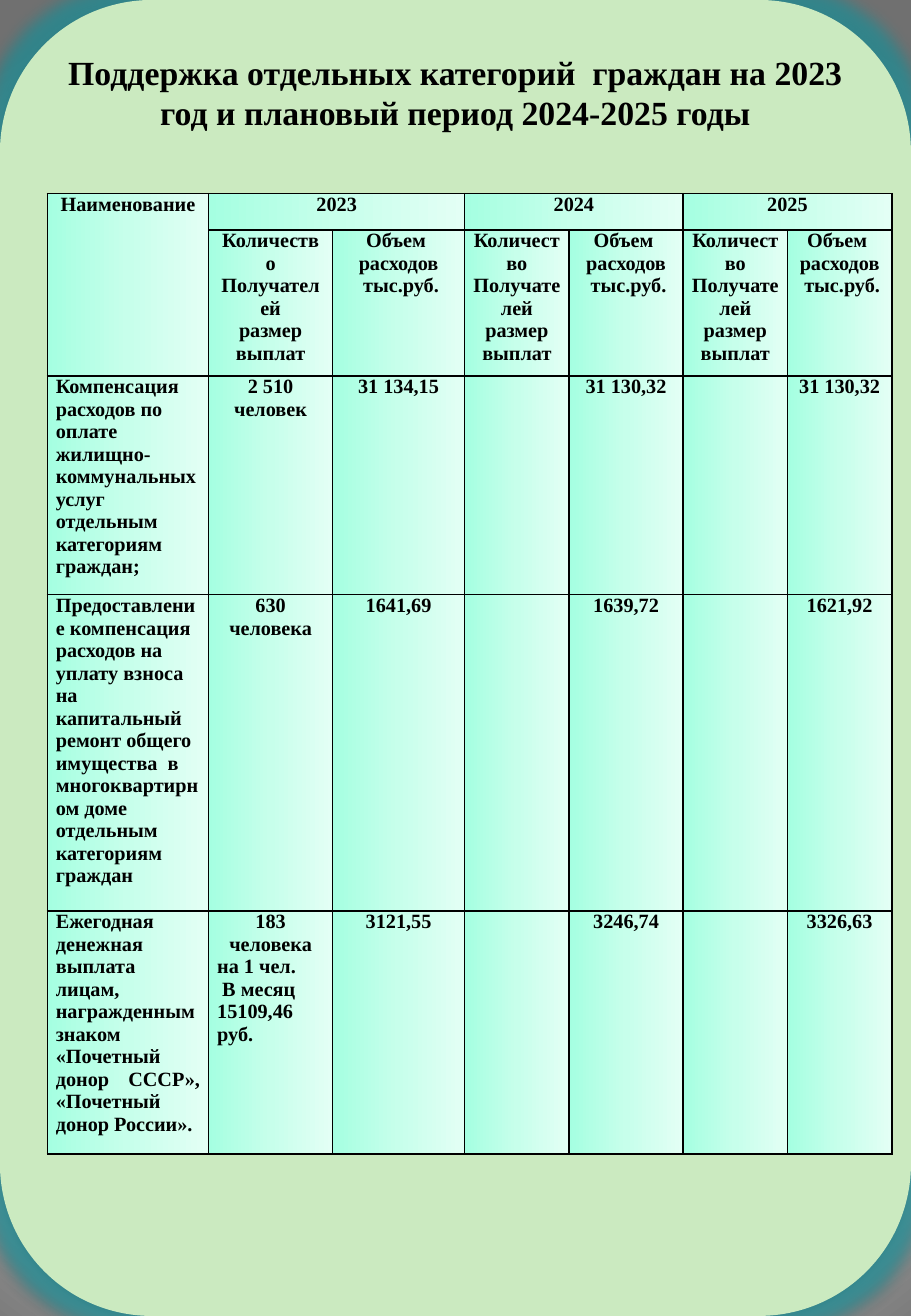
import pptx
import pptx.util
import pptx.dml.color
import pptx.enum.shapes
import pptx.enum.text
import pptx.oxml
import pptx.oxml.ns

ALIGN = pptx.enum.text.PP_ALIGN
WIDE, HIGH = pptx.util.Inches(7.5), pptx.util.Inches(10.83)
FACE = "Times New Roman"
MINT = [(0, "A5FFE1"), (50, "C7FFEB"), (100, "E3FFF5")]
SMOKE = [(0, "FFFFFF"), (25, "FFFFFF"), (100, "707070")]
TITLE = "Поддержка отдельных категорий  граждан на 2023 год и плановый период 2024-2025 годы"
COUNT = "Количество\nПолучателей\nразмер\nвыплат"
COST = "Объем \nрасходов\n тыс.руб."
COLS = [133, 102, 109, 86, 94, 86, 86]
ROWS = [30, 120, 180, 260, 200]
CELLS = [
    ["Наименование", "2023", "", "2024", "", "2025", ""],
    [""] + [COUNT, COST] * 3,
    ["Компенсация расходов по оплате жилищно-коммунальных услуг отдельным категориям граждан;",
     "2 510 человек", "31 134,15", "", "31 130,32", "", "31 130,32"],
    ["Предоставление компенсация расходов на уплату взноса на капитальный ремонт общего "
     "имущества  в многоквартирном доме отдельным категориям граждан",
     "630 человека", "1641,69", "", "1639,72", "", "1621,92"],
    ["Ежегодная денежная выплата лицам, награжденным знаком «Почетный донор СССР», "
     "«Почетный донор России».",
     "183 человека\nна 1 чел.\n В месяц 15109,46 руб.", "3121,55", "", "3246,74", "", "3326,63"],
]


def apply(item, form):
    for key, value in form.items():
        setattr(item, key, value)


def paint(fill, tone):
    fill.solid()
    fill.fore_color.rgb = pptx.dml.color.RGBColor.from_string(tone)


def build(tag, rest):
    return pptx.oxml.parse_xml(f"<a:{tag} {pptx.oxml.ns.nsdecls('a')} {rest}</a:{tag}>")


def hue(tone, alpha=100):
    return f'<a:srgbClr val="{tone}"><a:alpha val="{alpha * 1000}"/></a:srgbClr>'


def blend(stops, shade):
    marks = "".join(f'<a:gs pos="{spot * 1000}">{hue(tone)}</a:gs>' for spot, tone in stops)
    return build("gradFill", f'rotWithShape="1"><a:gsLst>{marks}</a:gsLst>{shade}')


def style(part, size, align):
    part.alignment = align
    for run in part.runs:
        apply(run.font, {"name": FACE, "size": pptx.util.Pt(size), "bold": True})
        paint(run.font.fill, "000000")


def draw_back(slide):
    slide.background.fill.solid()
    node = slide.element.find(".//" + pptx.oxml.ns.qn("p:bgPr"))
    shade = ('<a:path path="circle"><a:fillToRect l="10000" t="110000" '
             'r="10000" b="100000"/></a:path>')
    node.replace(node[0], blend(SMOKE, shade))


def draw_card(slide, left, top, width, height):
    kind = pptx.enum.shapes.MSO_SHAPE.ROUNDED_RECTANGLE
    card = slide.shapes.add_shape(kind, left, top, width, height)
    paint(card.fill, "CBEAC0")
    card.line.fill.background()
    card.shadow.inherit = False
    node = card.element.spPr
    node.replace(node.find(pptx.oxml.ns.qn("a:effectLst")), build(
        "effectLst", f'><a:glow rad="228600">{hue("18A0AA", 60)}</a:glow>'
        f'<a:outerShdw blurRad="44450" dist="27940" dir="5400000">{hue("000000", 32)}</a:outerShdw>'))
    slide.shapes._spTree.insert(2, card.element)


def draw_title(slide, left, top, width, height):
    title = slide.shapes.title
    apply(title, {"left": left, "top": top, "width": width, "height": height})
    frame = title.text_frame
    apply(frame, {"text": TITLE, "word_wrap": True,
                  "auto_size": pptx.enum.text.MSO_AUTO_SIZE.NONE,
                  "vertical_anchor": pptx.enum.text.MSO_ANCHOR.MIDDLE})
    style(frame.paragraphs[0], 20, ALIGN.CENTER)


def pick(row, col, step):
    if row < 2 or (col > 0 and step == 0):
        return ALIGN.CENTER
    return ALIGN.JUSTIFY if (row, col) == (4, 0) else ALIGN.LEFT


def draw_cell(cell, row, col):
    side = pptx.util.Inches(0.07)
    apply(cell, {"text": CELLS[row][col], "margin_left": side, "margin_right": side,
                 "margin_top": 0, "margin_bottom": 0})
    for step, part in enumerate(cell.text_frame.paragraphs):
        style(part, 12, pick(row, col, step))
    node = cell._tc.get_or_add_tcPr()
    for edge in "LRTB":
        node.append(build("ln" + edge, f'w="12700"><a:solidFill>{hue("000000")}</a:solidFill>'))
    node.append(blend(MINT, '<a:lin ang="0" scaled="0"/>'))


def draw_table(slide, left, top, width, height):
    table = slide.shapes.add_table(len(ROWS), len(COLS), left, top, width, height).table
    for col, share in zip(table.columns, COLS):
        col.width = int(width * share / sum(COLS))
    for row, share in zip(table.rows, ROWS):
        row.height = int(height * share / sum(ROWS))
    for row in range(len(ROWS)):
        for col in range(len(COLS)):
            draw_cell(table.cell(row, col), row, col)
    table.cell(0, 0).merge(table.cell(1, 0))
    for col in range(1, len(COLS), 2):
        table.cell(0, col).merge(table.cell(0, col + 1))


def place(left, top, width, height):
    return int(WIDE * left), int(HIGH * top), int(WIDE * width), int(HIGH * height)


def main():
    deck = pptx.Presentation()
    apply(deck, {"slide_width": WIDE, "slide_height": HIGH})
    slide = deck.slides.add_slide(deck.slide_layouts[5])
    draw_back(slide)
    draw_card(slide, *place(0, 0, 1, 1))
    draw_title(slide, *place(0.05, 0.03, 0.9, 0.08))
    draw_table(slide, *place(0.052, 0.147, 0.927, 0.73))
    deck.save("out.pptx")


if __name__ == "__main__":
    main()
